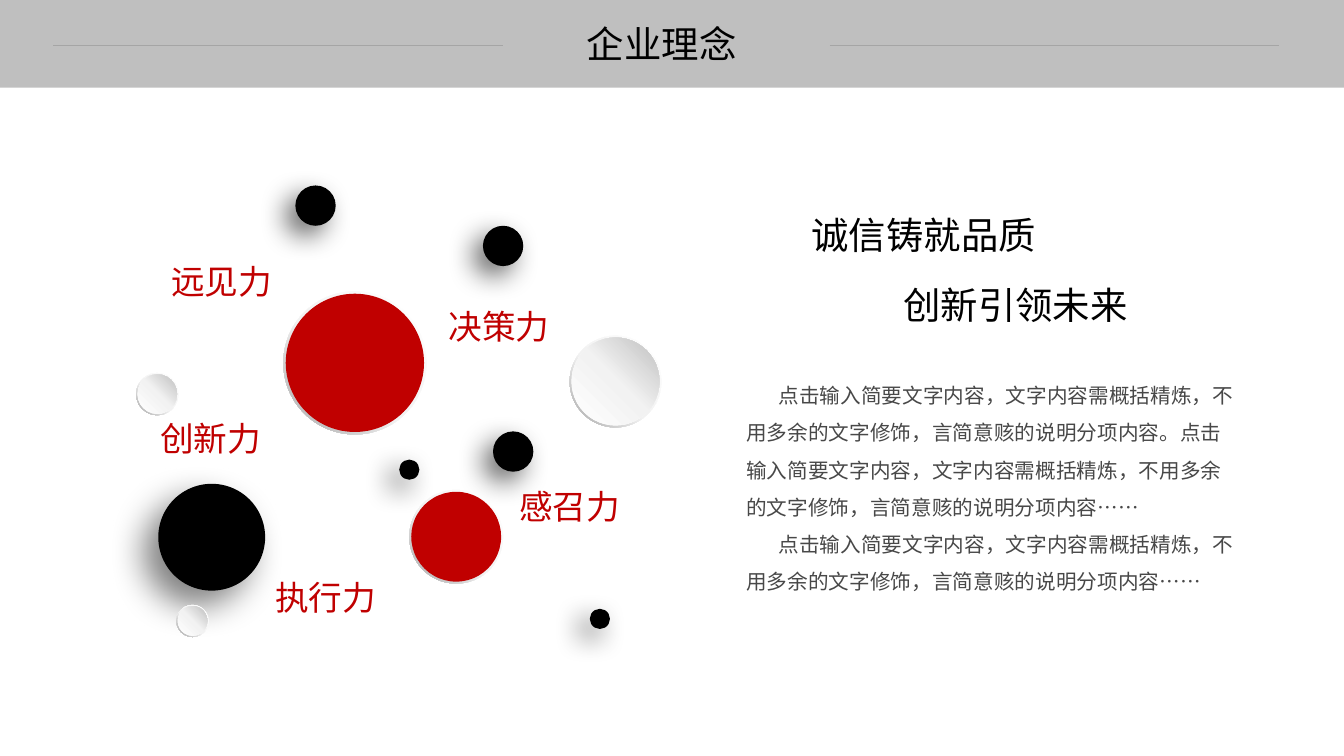
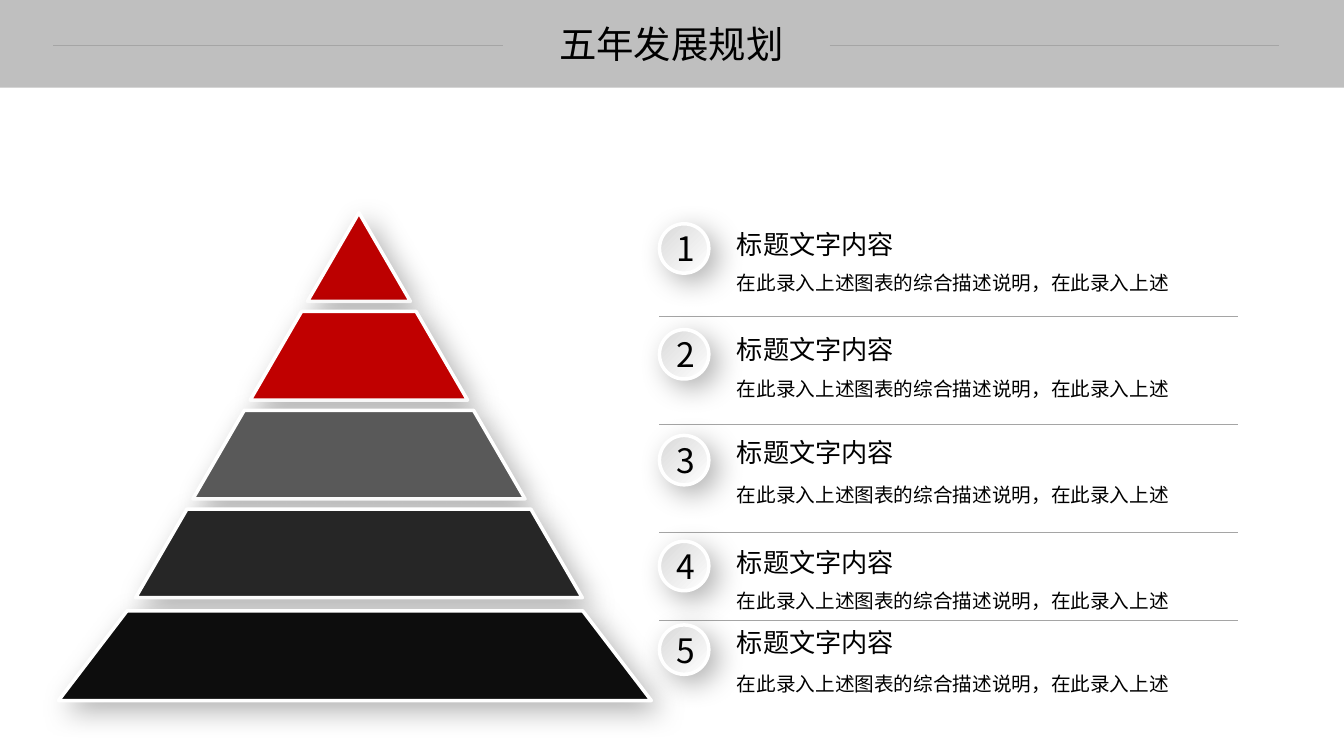
from dataclasses import dataclass
from typing import Optional

from lxml.etree import SubElement
from pptx import Presentation
from pptx.dml.color import RGBColor
from pptx.enum.shapes import MSO_CONNECTOR, MSO_SHAPE
from pptx.enum.text import MSO_ANCHOR, MSO_AUTO_SIZE, PP_ALIGN
from pptx.oxml.ns import qn
from pptx.util import Inches, Pt

FONT = "Noto Sans CJK SC"
COLORS = {
    "black": "000000",
    "white": "FFFFFF",
    "red": "C00000",
    "deep_red": "BC0000",
    "band": "BFBFBF",
    "rule": "A5A5A5",
    "body": "484848",
    "pale": "F2F2F2",
    "silver": "D9D9D9",
    "shade": "A6A6A6",
    "gray": "595959",
    "charcoal": "262626",
    "ink": "0D0D0D",
}


@dataclass(frozen=True)
class Gradient:
    angle: int  # clockwise degrees
    stops: tuple[tuple[int, str], ...]


@dataclass(frozen=True)
class Shadow:
    opacity: int
    blur: int
    distance: int
    angle: int


@dataclass(frozen=True)
class Ball:
    left: float
    top: float
    size: float
    fill: str | Gradient = "black"
    shadow: Optional[Shadow] = None


@dataclass(frozen=True)
class Label:
    left: float
    top: float
    text: str


@dataclass(frozen=True)
class Tier:
    center: float
    top: float
    height: float
    top_half: float
    base_half: float
    color: str


@dataclass(frozen=True)
class PlanRow:
    badge_top: float
    heading_top: float
    rule_y: Optional[float]


RIM = Gradient(135, ((0, "white"), (55, "pale"), (100, "shade")))
PEARL = Gradient(315, ((0, "white"), (51, "pale"), (100, "band")))
BADGE = Gradient(45, ((0, "silver"), (100, "white")))
BIG_BALL_SHADOW = Shadow(50, 25, 15, 135)
BALL_SHADOW = Shadow(60, 20, 10, 135)
PLAN_SHADOW = Shadow(30, 20, 8, 45)

MOTTOES = (Label(7.95, 2.06, "诚信铸就品质"), Label(8.86, 2.75, "创新引领未来"))
STRENGTHS = (
    Label(1.6, 2.54, "远见力"),
    Label(2.63, 5.67, "执行力"),
    Label(5.05, 4.77, "感召力"),
    Label(4.35, 2.99, "决策力"),
    Label(1.49, 4.1, "创新力"),
)
BALLS = (
    Ball(2.81, 2.89, 1.42, "red"),
    Ball(1.57, 4.8, 1.06, shadow=BIG_BALL_SHADOW),
    Ball(4.89, 4.28, 0.4, shadow=BALL_SHADOW),
    Ball(5.65, 3.33, 0.91, PEARL),
    Ball(1.75, 6, 0.32, PEARL),
    Ball(1.35, 3.7, 0.42, PEARL),
    Ball(4.79, 2.24, 0.4, shadow=BALL_SHADOW),
    Ball(5.85, 6.04, 0.2, shadow=BALL_SHADOW),
    Ball(4.06, 4.86, 0.93, "red"),
    Ball(2.93, 1.84, 0.4, shadow=BALL_SHADOW),
    Ball(3.96, 4.56, 0.2, shadow=BALL_SHADOW),
)
PHILOSOPHY = (
    "点击输入简要文字内容，文字内容需概括精炼，不用多余的文字修饰，言简意赅的说明分项内容。"
    "点击输入简要文字内容，文字内容需概括精炼，不用多余的文字修饰，言简意赅的说明分项内容……",
    "点击输入简要文字内容，文字内容需概括精炼，不用多余的文字修饰，言简意赅的说明分项内容……",
)

APEX, PITCH, TIER_HEIGHT, SLOPE = 2.11, 0.98, 0.88, 0.58
UPPER_TIERS = tuple(
    Tier(3.56, APEX + i * PITCH, TIER_HEIGHT, i * PITCH * SLOPE,
         (i * PITCH + TIER_HEIGHT) * SLOPE, color)
    for i, color in enumerate(("deep_red", "red", "gray", "charcoal"))
)
TIERS = (*UPPER_TIERS, Tier(3.52, 6.06, 0.89, 2.26, 2.94, "ink"))
PLAN_ROWS = (
    PlanRow(2.22, 2.22, 3.14),
    PlanRow(3.27, 3.26, 4.21),
    PlanRow(4.32, 4.28, 5.28),
    PlanRow(5.37, 5.37, 6.16),
    PlanRow(6.2, 6.16, None),
)
PLAN_HEADING = "标题文字内容"
PLAN_DETAIL = "在此录入上述图表的综合描述说明，在此录入上述"


def rgb(color: str) -> RGBColor:
    return RGBColor.from_string(COLORS[color])


def place(shape, left: float, top: float, width: float, height: float) -> None:
    shape.left, shape.top = Inches(left), Inches(top)
    shape.width, shape.height = Inches(width), Inches(height)


def add_run(paragraph, text: str, size: float, color: str) -> None:
    run = paragraph.add_run()
    run.text = text
    run.font.size = Pt(size)
    run.font.color.rgb = rgb(color)
    run.font.name = FONT
    SubElement(run.font._element, qn("a:ea"), typeface=FONT)


def paint(shape, fill: str | Gradient, shadow: Optional[Shadow] = None,
          outline: Optional[str] = None) -> None:
    if isinstance(fill, Gradient):
        shape.fill.gradient()
        shape.fill.gradient_angle = 360 - fill.angle
        stop_list = shape._element.spPr.find(qn("a:gradFill")).find(qn("a:gsLst"))
        for old_stop in list(stop_list):
            stop_list.remove(old_stop)
        for position, color in fill.stops:
            stop = SubElement(stop_list, qn("a:gs"), pos=str(position * 1000))
            SubElement(stop, qn("a:srgbClr"), val=COLORS[color])
    else:
        shape.fill.solid()
        shape.fill.fore_color.rgb = rgb(fill)
    if outline:
        shape.line.color.rgb = rgb(outline)
        shape.line.width = Pt(2.5)
    else:
        shape.line.fill.background()
    shape.shadow.inherit = False
    if shadow:
        effects = shape._element.spPr.find(qn("a:effectLst"))
        outer = SubElement(
            effects, qn("a:outerShdw"), blurRad=str(Pt(shadow.blur)),
            dist=str(Pt(shadow.distance)), dir=str(shadow.angle * 60000),
            algn="ctr", rotWithShape="0")
        tint = SubElement(outer, qn("a:srgbClr"), val=COLORS["black"])
        SubElement(tint, qn("a:alpha"), val=str(shadow.opacity * 1000))


def add_rule(slide, left: float, right: float, y: float):
    rule = slide.shapes.add_connector(
        MSO_CONNECTOR.STRAIGHT, Inches(left), Inches(y), Inches(right), Inches(y))
    rule.line.color.rgb = rgb("rule")
    rule.line.width = Pt(0.75)
    SubElement(rule._element.spPr, qn("a:effectLst"))
    return rule


def add_text(slide, label: Label, width: float, height: float, size: float,
             color: str = "black", wrap: bool = False) -> None:
    box = slide.shapes.add_textbox(
        Inches(label.left), Inches(label.top), Inches(width), Inches(height))
    box.text_frame.word_wrap = wrap
    add_run(box.text_frame.paragraphs[0], label.text, size, color)


def add_circle(slide, left: float, top: float, size: float, kind=MSO_SHAPE.OVAL):
    return slide.shapes.add_shape(
        kind, Inches(left), Inches(top), Inches(size), Inches(size))


def move_header_to_master(slide) -> None:
    """Draw the title band and its rules, then let every layout inherit them."""
    band = slide.shapes.add_shape(
        MSO_SHAPE.RECTANGLE, 0, 0, Inches(13.33), Inches(0.87))
    paint(band, "band")
    rules = [add_rule(slide, left, left + 4.46, 0.45) for left in (0.53, 8.23)]
    master_tree = slide.slide_layout.slide_master.shapes._spTree
    for offset, part in enumerate((band, *rules)):
        part._element.xpath(".//p:cNvPr")[0].set("id", str(100 + offset))
        master_tree.insert(2 + offset, part._element)


def set_title(slide, text: str, width: float) -> None:
    title = slide.shapes.title
    place(title, 5.41, 0.16, width, 0.55)
    title.text_frame.auto_size = MSO_AUTO_SIZE.NONE
    title.text_frame.vertical_anchor = MSO_ANCHOR.MIDDLE
    paragraph = title.text_frame.paragraphs[0]
    paragraph.alignment = PP_ALIGN.CENTER
    add_run(paragraph, text, 26.7, "black")


def fill_body(body, texts: tuple[str, ...]) -> None:
    place(body, 7.3, 3.63, 5.04, 2.69)
    frame = body.text_frame
    frame.auto_size = MSO_AUTO_SIZE.NONE
    frame.vertical_anchor = MSO_ANCHOR.TOP
    for i, text in enumerate(texts):
        paragraph = frame.add_paragraph() if i else frame.paragraphs[0]
        properties = paragraph._p.get_or_add_pPr()
        properties.set("marL", "0")
        properties.set("indent", str(Inches(0.32)))
        SubElement(properties, qn("a:buNone"))
        paragraph.line_spacing = 1.5
        paragraph.space_before = Pt(0)
        add_run(paragraph, text, 14.7, "body")


def add_ball(slide, ball: Ball) -> None:
    """Draw a ball; one without a shadow sits inside a shaded rim."""
    inset = 0.0
    if ball.shadow is None:
        rim = add_circle(slide, ball.left, ball.top, ball.size, MSO_SHAPE.DONUT)
        rim.adjustments[0] = 0.05
        paint(rim, RIM)
        inset = 0.01 + 0.01 * ball.size
    core = add_circle(slide, ball.left + inset, ball.top + inset, ball.size - 2 * inset)
    paint(core, ball.fill, ball.shadow)


def add_tier(slide, tier: Tier) -> None:
    base = tier.top + tier.height
    corners = [
        (tier.center - tier.top_half, tier.top),
        (tier.center + tier.top_half, tier.top),
        (tier.center + tier.base_half, base),
        (tier.center - tier.base_half, base),
    ]
    start, *others = [(Inches(x), Inches(y)) for x, y in dict.fromkeys(corners)]
    builder = slide.shapes.build_freeform(*start)
    builder.add_line_segments(others, close=True)
    paint(builder.convert_to_shape(), tier.color, PLAN_SHADOW, "white")


def add_plan_row(slide, number: int, row: PlanRow) -> None:
    badge = add_circle(slide, 6.54, row.badge_top, 0.49)
    paint(badge, BADGE, PLAN_SHADOW, "white")
    badge.text_frame.vertical_anchor = MSO_ANCHOR.MIDDLE
    paragraph = badge.text_frame.paragraphs[0]
    paragraph.alignment = PP_ALIGN.CENTER
    add_run(paragraph, str(number), 24, "black")
    add_text(slide, Label(7.21, row.heading_top, PLAN_HEADING), 2.49, 0.42, 18.7, wrap=True)
    add_text(slide, Label(7.21, row.badge_top + 0.42, PLAN_DETAIL), 5.07, 0.34, 14, wrap=True)
    if row.rule_y is not None:
        add_rule(slide, 6.54, 12.28, row.rule_y)


def build_philosophy(slide) -> None:
    set_title(slide, "企业理念", 2.31)
    fill_body(slide.placeholders[1], PHILOSOPHY)
    for motto in MOTTOES:
        add_text(slide, motto, 2.44, 0.55, 26.7)
    for strength in STRENGTHS:
        add_text(slide, strength, 1.21, 0.5, 24, "red")
    for ball in BALLS:
        add_ball(slide, ball)


def build_plan(slide) -> None:
    set_title(slide, "五年发展规划", 2.5)
    for number, row in enumerate(PLAN_ROWS, start=1):
        add_plan_row(slide, number, row)
    for tier in TIERS:
        add_tier(slide, tier)


def main() -> None:
    deck = Presentation()
    deck.slide_width, deck.slide_height = Inches(13.33), Inches(7.5)
    philosophy = deck.slides.add_slide(deck.slide_layouts[1])
    move_header_to_master(philosophy)
    build_philosophy(philosophy)
    build_plan(deck.slides.add_slide(deck.slide_layouts[5]))
    deck.save("out.pptx")


if __name__ == "__main__":
    main()
